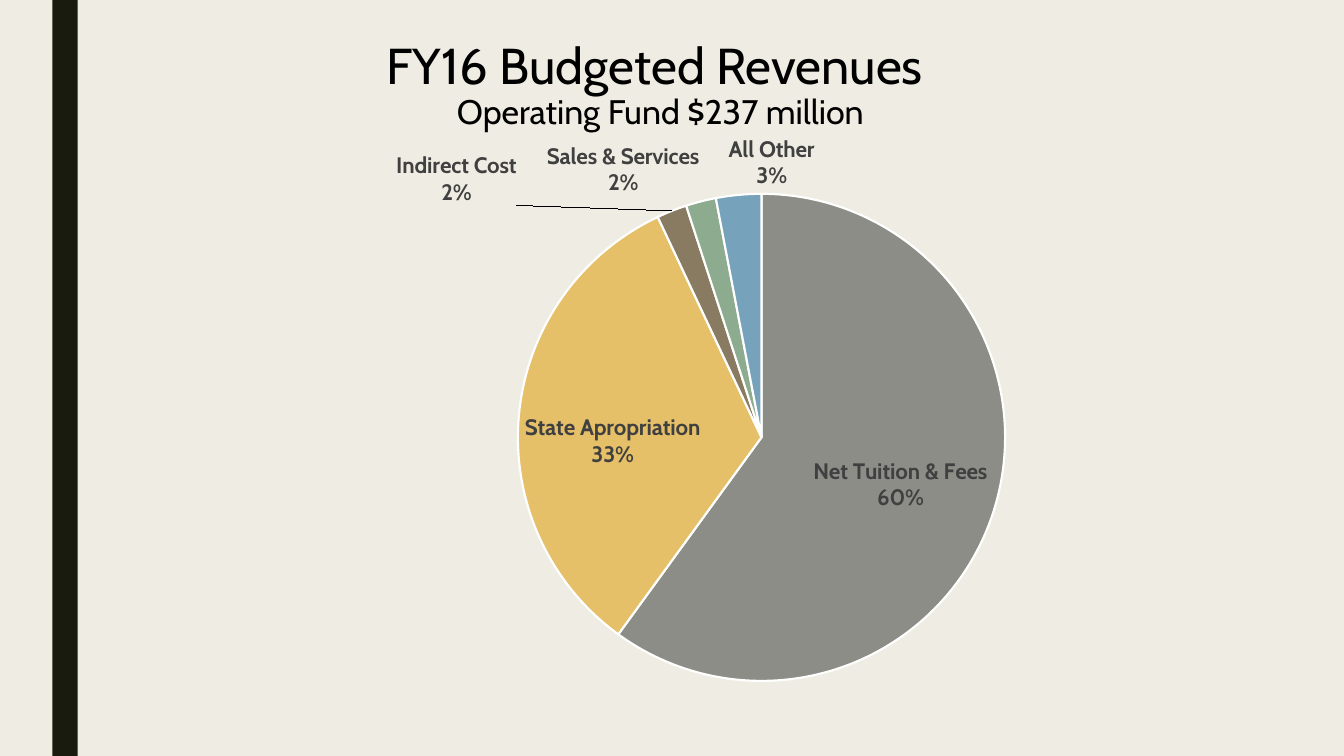
from pptx import Presentation
from pptx.chart.data import CategoryChartData
from pptx.dml.color import RGBColor
from pptx.enum.chart import XL_CHART_TYPE as ChartType, XL_LABEL_POSITION as LabelPos
from pptx.enum.shapes import MSO_SHAPE as Shape
from pptx.enum.text import MSO_ANCHOR as Anchor, MSO_AUTO_SIZE as AutoSize, PP_ALIGN as Align
from pptx.oxml import parse_xml
from pptx.oxml.ns import nsdecls, qn
from pptx.util import Inches, Pt

CREAM = RGBColor(0xEF, 0xED, 0xE3)
DARK_OLIVE = RGBColor(0x19, 0x1B, 0x0E)
BLACK = RGBColor(0, 0, 0)
WHITE = RGBColor(255, 255, 255)
LABEL_GRAY = RGBColor(0x40, 0x40, 0x40)
STONE = RGBColor(0x8C, 0x8D, 0x86)
GOLD = RGBColor(0xE6, 0xC0, 0x69)
BROWN = RGBColor(0x89, 0x7B, 0x61)
SAGE = RGBColor(0x8D, 0xAB, 0x8E)
BLUE = RGBColor(0x77, 0xA2, 0xBB)
FONT = "Cabin"

TITLE_LINES = [("FY16 Budgeted Revenues ", 36), ("Operating Fund $237 million", 24.3)]
# category, percent, colour, label position, label shift as a share of the chart
REVENUES = [
    ("Net Tuition & Fees", 60, STONE, LabelPos.INSIDE_END, None),
    ("State Apropriation", 33, GOLD, LabelPos.INSIDE_END, None),
    ("Indirect Cost", 2, BROWN, LabelPos.OUTSIDE_END, (-0.12, 0)),
    ("Sales & Services", 2, SAGE, LabelPos.OUTSIDE_END, None),
    ("All Other", 3, BLUE, LabelPos.OUTSIDE_END, (0.06, 0)),
]


def format_font(font, size, color, bold=False):
    for name, value in {"name": FONT, "size": Pt(size), "bold": bold}.items():
        setattr(font, name, value)
    font.color.rgb = color


def manual_layout(**values):
    """Return a c:layout element holding the given settings in order."""
    settings = "".join(f'<c:{tag} val="{value}"/>' for tag, value in values.items())
    return parse_xml(f'<c:layout {nsdecls("c")}><c:manualLayout>{settings}'
                     "</c:manualLayout></c:layout>")


def add_side_bar(slide, left, top, width, height):
    bar = slide.shapes.add_shape(Shape.RECTANGLE, left, top, width, height)
    bar.shadow.inherit = False
    bar.fill.solid()
    bar.fill.fore_color.rgb = DARK_OLIVE
    bar.line.fill.background()


def fill_title(slide, left, top, width, height):
    title = slide.shapes.title
    box = {"left": left, "top": top, "width": width, "height": height}
    for name, value in box.items():
        setattr(title, name, value)
    frame = title.text_frame
    frame.auto_size = AutoSize.NONE
    frame.vertical_anchor = Anchor.TOP
    heading = frame.paragraphs[0]
    heading.alignment = Align.CENTER
    heading.line_spacing = 0.89
    for index, (text, size) in enumerate(TITLE_LINES):
        if index:
            heading.add_line_break()
        run = heading.add_run()
        run.text = text
        format_font(run.font, size, BLACK)


def show_name_and_percent(labels):
    """Make a c:dLbl or c:dLbls element show category and percent on two lines."""
    for tag, shown in {"c:showVal": 0, "c:showCatName": 1, "c:showPercent": 1}.items():
        labels.find(qn(tag)).set("val", str(shown))
    labels.find(qn("c:showBubbleSize")).addnext(
        parse_xml(f'<c:separator {nsdecls("c")}>\n</c:separator>'))


def add_revenue_pie(slide, left, top, width, height):
    data = CategoryChartData(number_format="General")
    data.categories = [revenue[0] for revenue in REVENUES]
    data.add_series("Series 1", [revenue[1] for revenue in REVENUES])
    chart = slide.shapes.add_chart(ChartType.PIE, left, top, width, height, data).chart
    chart.has_legend = False
    chart.has_title = False
    format_font(chart.font, 10, BLACK)

    plot = chart.plots[0]
    plot.vary_by_categories = True
    plot_area = chart._chartSpace.chart.plotArea
    for layout in plot_area.findall(qn("c:layout")):
        plot_area.remove(layout)
    plot_area.insert(0, manual_layout(layoutTarget="inner", xMode="edge", yMode="edge",
                                      x=0.38, y=0.125, w=0.382, h=0.85))

    series = plot.series[0]
    labels = series.data_labels
    format_font(labels.font, 16, LABEL_GRAY, bold=True)
    labels.number_format = "0%"
    labels.number_format_is_linked = False
    show_name_and_percent(labels._element)

    for index, (_, _, color, position, shift) in enumerate(REVENUES):
        point = series.points[index]
        point.format.fill.solid()
        point.format.fill.fore_color.rgb = color
        point.format.line.color.rgb = WHITE
        point.format.line.width = Pt(1.5)
        label = point.data_label
        format_font(label.font, 16, LABEL_GRAY, bold=True)
        label.position = position
        label_xml = labels._element.findall(qn("c:dLbl"))[index]
        show_name_and_percent(label_xml)
        if shift:
            label_xml.find(qn("c:idx")).addnext(manual_layout(x=shift[0], y=shift[1]))


def build_revenue_slide(deck):
    slide = deck.slides.add_slide(deck.slide_layouts[5])
    slide.background.fill.solid()
    slide.background.fill.fore_color.rgb = CREAM
    add_side_bar(slide, Inches(0.52), 0, Inches(0.25), deck.slide_height)
    fill_title(slide, Inches(0.22), Inches(0.36), Inches(12.66), Inches(0.69))
    add_revenue_pie(slide, Inches(0.33), Inches(1.21), Inches(12.65), Inches(5.69))


def main():
    deck = Presentation()
    deck.slide_width = Inches(13.33)
    deck.slide_height = Inches(7.5)
    build_revenue_slide(deck)
    deck.save("out.pptx")


if __name__ == "__main__":
    main()
